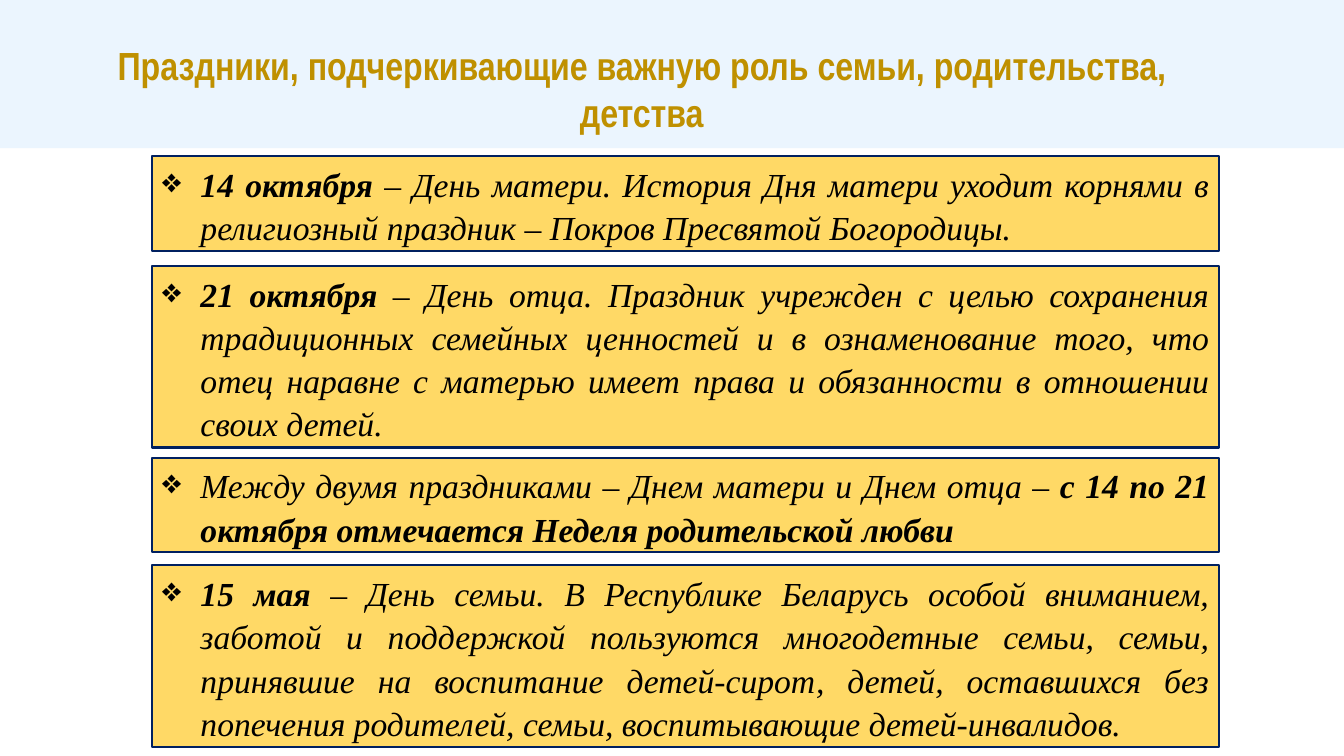
from lxml.etree import SubElement as Sub
from pptx import Presentation
from pptx.dml.color import RGBColor as RGB
from pptx.enum.shapes import MSO_SHAPE as Shape
from pptx.enum.text import MSO_ANCHOR as Anchor, MSO_AUTO_SIZE as Fit, PP_ALIGN as Align
from pptx.oxml.ns import qn
from pptx.util import Emu, Pt

PX = 9144
WIDE, HIGH = 1333, 750
LEFT, WIDTH, INDENT = 151, 1058, 38

HEAD = dict(name="Arial Narrow", size=Pt(28), bold=True)
BODY = dict(name="Times New Roman", size=Pt(24), italic=True)

CARDS = [
    (155, 94, [("14 октября ", True),
               ("– День матери. История Дня матери уходит корнями в религиозный "
                "праздник – Покров Пресвятой Богородицы.", False)]),
    (264, 180, [("21 октября ", True),
                ("– День отца. Праздник учрежден с целью сохранения традиционных "
                 "семейных ценностей и в ознаменование того, что отец наравне с "
                 "матерью имеет права и обязанности в отношении своих детей.", False)]),
    (454, 94, [("Между двумя праздниками – Днем матери и Днем отца – ", False),
               ("с 14 по 21 октября отмечается Неделя родительской любви", True)]),
    (561, 180, [("15 мая ", True),
                ("– День семьи. В Республике Беларусь особой вниманием, заботой и "
                 "поддержкой пользуются многодетные семьи, семьи, принявшие на "
                 "воспитание детей-сирот, детей, оставшихся без попечения родителей, "
                 "семьи, воспитывающие детей-инвалидов.", False)]),
]


def px(*nums):
    return [Emu(n * PX) for n in nums]


def tint(hue):
    return RGB.from_string(hue)


class Deck:
    """Draws the elements of the slide in one style."""

    def __init__(self):
        self.prs = Presentation()
        self.prs.slide_width, self.prs.slide_height = px(WIDE, HIGH)
        self.slide = self.prs.slides.add_slide(self.prs.slide_layouts[6])

    def rect(self, x, y, w, h, fill, line=None):
        box = self.slide.shapes.add_shape(Shape.RECTANGLE, *px(x, y, w, h))
        box.shadow.inherit = False
        box.fill.solid()
        box.fill.fore_color.rgb = tint(fill)
        if line:
            box.line.color.rgb = tint(line)
            box.line.width = Pt(1.5)
        else:
            box.line.fill.background()
        return box

    def frame(self, box, align):
        text = box.text_frame
        form = dict(word_wrap=True, auto_size=Fit.SHAPE_TO_FIT_TEXT,
                    vertical_anchor=Anchor.TOP)
        for key, val in form.items():
            setattr(text, key, val)
        para = text.paragraphs[0]
        para.alignment = align
        return para

    def run(self, para, text, hue, form):
        run = para.add_run()
        run.text = text
        for key, val in form.items():
            setattr(run.font, key, val)
        run.font.color.rgb = tint(hue)

    def title(self, x, y, w, h, text):
        box = self.slide.shapes.add_textbox(*px(x, y, w, h))
        self.run(self.frame(box, Align.CENTER), text, "BF9000", HEAD)

    def card(self, y, h, parts):
        box = self.rect(LEFT, y, WIDTH, h, "FFD966", "002060")
        para = self.frame(box, Align.JUSTIFY)
        props = para._p.get_or_add_pPr()
        for key, val in dict(marL=INDENT, indent=-INDENT).items():
            props.set(key, str(val * PX))
        Sub(props, qn("a:buChar"), char="❖")
        para.line_spacing = 1.07
        for text, bold in parts:
            self.run(para, text, "000000", dict(BODY, bold=bold))


def main():
    deck = Deck()
    deck.rect(0, -3, WIDE, 150, "EBF5FE")
    deck.title(63, 36, 1147, 104,
               "Праздники, подчеркивающие важную роль семьи, родительства, детства")
    for card in CARDS:
        deck.card(*card)
    deck.prs.save("out.pptx")


if __name__ == "__main__":
    main()
